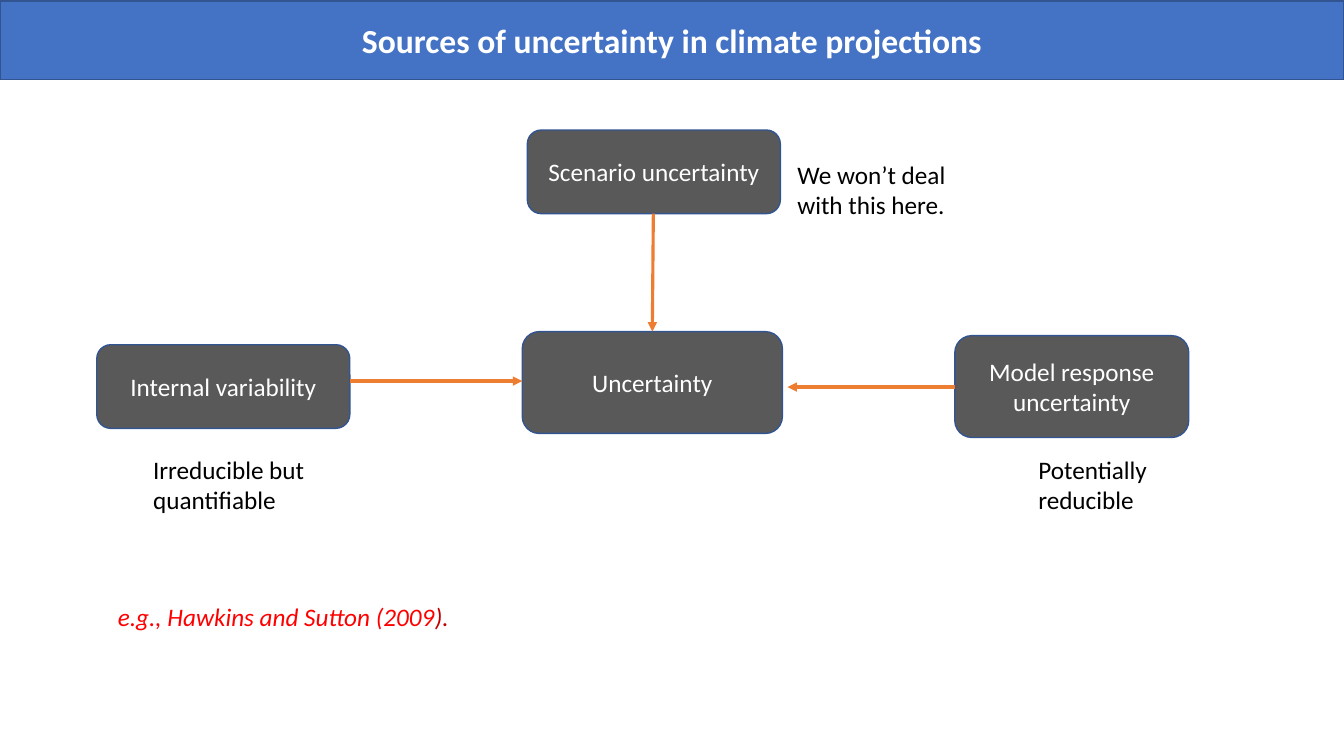
"""Build a slide on the sources of uncertainty in climate projections."""
from lxml import etree
from pptx import Presentation
from pptx.dml.color import RGBColor
from pptx.enum import shapes, text
from pptx.oxml.ns import qn
from pptx.util import Inches, Pt

HUES = {"bar": "4472C4", "edge": "325491", "box": "595959", "arrow": "ED7D31",
        "white": "FFFFFF", "black": "000000", "red": "FF0000", "dark": "C00000"}


def paint(shape, fill):
    shape.fill.solid()
    shape.fill.fore_color.rgb = RGBColor.from_string(HUES[fill])
    shape.line.color.rgb = RGBColor.from_string(HUES["edge"])
    shape.line.width = Pt(1)


def write(shape, runs, size=18, bold=False, italic=False, center=False):
    frame = shape.text_frame
    frame.word_wrap = True
    para = frame.paragraphs[0]
    if center:
        frame.vertical_anchor = text.MSO_ANCHOR.MIDDLE
        para.alignment = text.PP_ALIGN.CENTER
    for words, hue in runs:
        run = para.add_run()
        run.text = words
        run.font.name = "Calibri"
        run.font.size = Pt(size)
        run.font.bold = bold
        run.font.italic = italic
        run.font.color.rgb = RGBColor.from_string(HUES[hue])


deck = Presentation()
deck.slide_width, deck.slide_height = Inches(13.33), Inches(7.5)
slide = deck.slides.add_slide(deck.slide_layouts[5])

title = slide.shapes.title
title.left, title.top = Inches(0), Inches(0.01)
title.width, title.height = Inches(13.33), Inches(0.78)
paint(title, "bar")
write(title, [("Sources of uncertainty in climate projections", "white")],
      size=24, bold=True, center=True)
title.text_frame.auto_size = text.MSO_AUTO_SIZE.NONE

boxes = [
    ("Uncertainty", 5.18, 3.29, 2.58, 1.01),
    ("Internal variability", 0.96, 3.42, 2.51, 0.83),
    ("Scenario uncertainty", 5.23, 1.29, 2.51, 0.83),
    ("Model response uncertainty", 9.47, 3.33, 2.32, 1.01),
]
for words, *place in boxes:
    box = slide.shapes.add_shape(shapes.MSO_SHAPE.ROUNDED_RECTANGLE,
                                 *[Inches(n) for n in place])
    box.shadow.inherit = False
    paint(box, "box")
    write(box, [(words, "white")], center=True)

arrows = [(3.47, 3.78, 5.18, 3.78), (6.48, 2.12, 6.47, 3.29), (9.47, 3.84, 7.81, 3.84)]
for ends in arrows:
    arrow = slide.shapes.add_connector(shapes.MSO_CONNECTOR.STRAIGHT,
                                       *[Inches(n) for n in ends])
    arrow.line.color.rgb = RGBColor.from_string(HUES["arrow"])
    arrow.line.width = Pt(2.25)
    etree.SubElement(arrow.line._get_or_add_ln(), qn("a:tailEnd"), type="triangle")
    etree.SubElement(arrow._element.spPr, qn("a:effectLst"))

notes = [
    ([("Irreducible but quantifiable", "black")], False, 1.42, 4.46, 1.92, 0.71),
    ([("Potentially reducible", "black")], False, 10.2, 4.46, 2, 0.71),
    ([("We won’t deal with this here.", "black")], False, 7.81, 1.53, 2.03, 0.71),
    ([("e.g., Hawkins and Sutton (2009", "red"), (").", "dark")], True,
     1.07, 5.92, 6.67, 0.4),
]
for runs, slant, *place in notes:
    note = slide.shapes.add_textbox(*[Inches(n) for n in place])
    write(note, runs, italic=slant)
    note.text_frame.auto_size = text.MSO_AUTO_SIZE.SHAPE_TO_FIT_TEXT

deck.save("out.pptx")
